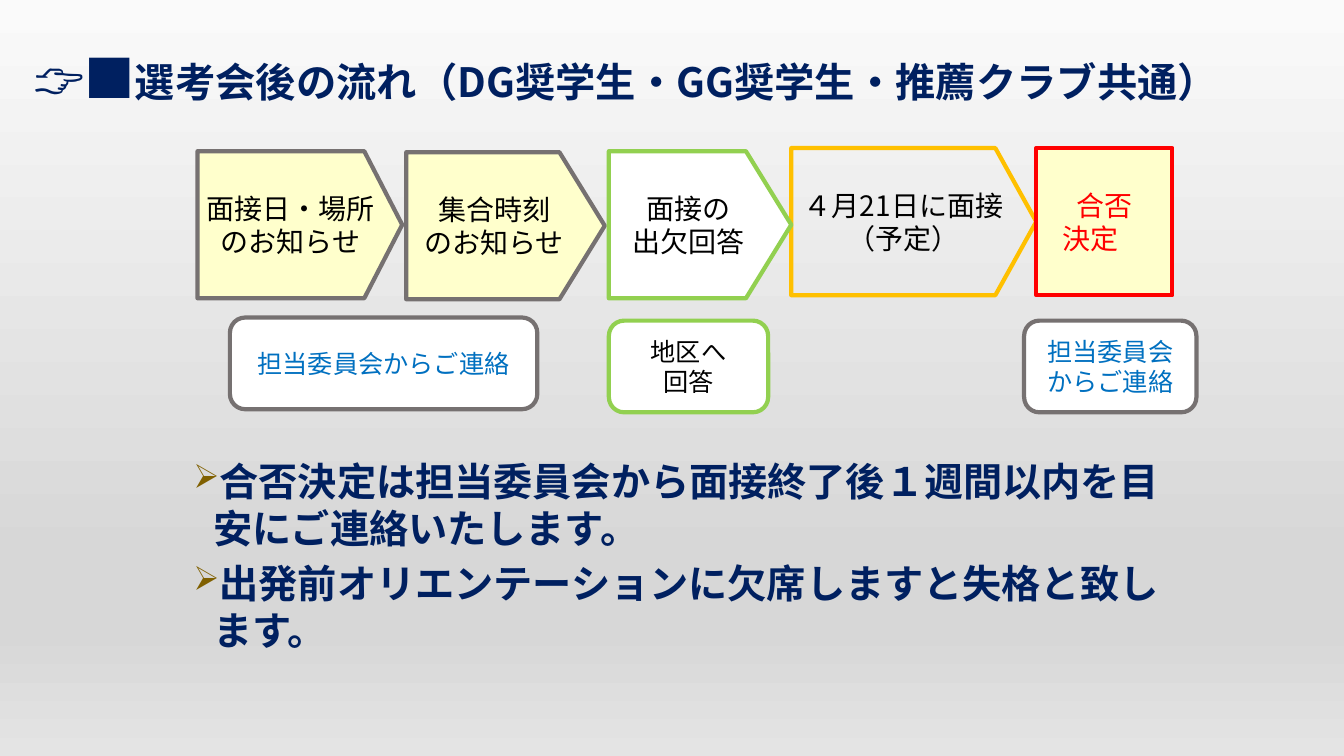
from copy import deepcopy

from lxml.etree import SubElement
from pptx import Presentation
from pptx.dml.color import RGBColor
from pptx.enum.shapes import MSO_SHAPE as Preset
from pptx.enum.text import MSO_ANCHOR as Anchor, MSO_AUTO_SIZE as AutoSize, PP_ALIGN as Align
from pptx.oxml.ns import qn
from pptx.util import Pt

FONT = "Noto Sans CJK JP"
NAVY, BLUE, BLACK, RED = "002060", "0070C0", "000000", "FF0000"
GRAY, GREEN, GOLD = "767171", "92D050", "FFC000"
CREAM, WHITE = "FFFFCC", "FFFFFF"


def rgb(value):
    return RGBColor.from_string(value)


def format_run(run, size, color, bold=False):
    run.font.size = Pt(size)
    run.font.bold = bold
    run.font.color.rgb = rgb(color)
    run.font.name = FONT
    SubElement(run.font._element, qn("a:ea"), typeface=FONT)


presentation = Presentation()
presentation.slide_width, presentation.slide_height = Pt(960), Pt(540)
slide = presentation.slides.add_slide(presentation.slide_layouts[5])

background = slide.background.fill
background.gradient()
background.gradient_angle = 270
stop_list = slide.element.find(".//" + qn("a:gsLst"))
for extra_stop in range(2):
    stop_list.append(deepcopy(stop_list[0]))
shades = [(0, "FAFAFA"), (0.74, "D7D7D7"), (0.83, "D7D7D7"), (1, "E4E4E4")]
for stop, (position, shade) in zip(background.gradient_stops, shades):
    stop.position = position
    stop.color.rgb = rgb(shade)

title = slide.shapes.title
title.left, title.top, title.width, title.height = Pt(16.6), Pt(20.2), Pt(943), Pt(61.2)
title.text_frame.auto_size = AutoSize.NONE
title.text_frame.vertical_anchor = Anchor.BOTTOM
heading = title.text_frame.paragraphs[0]
heading.alignment = Align.LEFT
heading.line_spacing = 0.9
for text, size in [("👉■", 36), ("選考会後の流れ（DG奨学生・GG奨学生・推薦クラブ共通）", 28.8)]:
    run = heading.add_run()
    run.text = text
    format_run(run, size, NAVY, True)

steps = [
    (141.1, 108, 146.2, 0.258, CREAM, GRAY, BLACK, "面接日・場所\nのお知らせ"),
    (290.2, 108.7, 141.8, 0.308, CREAM, GRAY, BLACK, "集合時刻\nのお知らせ"),
    (565.2, 105.8, 175, 0.278, None, GOLD, BLACK, "４月21日に面接（予定）"),
    (740.2, 105.8, 97.2, None, CREAM, RED, RED, "合否\n決定　"),
    (434.9, 108, 130.3, 0.308, WHITE, GREEN, BLACK, "面接の\n出欠回答"),
]
contacts = [
    (164.2, 226.8, 219.6, GRAY, BLUE, "担当委員会からご連絡"),
    (731.5, 229, 123.1, GRAY, BLUE, "担当委員会からご連絡"),
    (434.9, 229, 113.8, GREEN, BLACK, "地区へ\n回答"),
]
boxes = []
for left, top, width, point, fill, line, color, text in steps:
    preset = Preset.RECTANGLE if point is None else Preset.PENTAGON
    shape = slide.shapes.add_shape(preset, Pt(left), Pt(top), Pt(width), Pt(105.1))
    if point is not None:
        shape.adjustments[0] = point
    frame = shape.text_frame
    frame.margin_left = frame.margin_right = Pt(5.8)
    frame.margin_top = frame.margin_bottom = Pt(0.7)
    boxes.append((shape, fill, line, color, text, 20))
for left, top, width, line, color, text in contacts:
    shape = slide.shapes.add_shape(Preset.ROUNDED_RECTANGLE, Pt(left), Pt(top), Pt(width), Pt(65.5))
    boxes.append((shape, WHITE, line, color, text, 18))

for shape, fill, line, color, text, size in boxes:
    shape.shadow.inherit = False
    if fill is None:
        shape.fill.background()
    else:
        shape.fill.solid()
        shape.fill.fore_color.rgb = rgb(fill)
    shape.line.color.rgb = rgb(line)
    shape.line.width = Pt(3)
    frame = shape.text_frame
    frame.word_wrap = True
    frame.vertical_anchor = Anchor.MIDDLE
    frame.text = text
    for paragraph in frame.paragraphs:
        paragraph.alignment = Align.CENTER
        format_run(paragraph.runs[0], size, color)

notices = slide.shapes.add_textbox(Pt(131), Pt(323), Pt(708.5), Pt(167)).text_frame
notices.word_wrap = True
notices.text = (
    "合否決定は担当委員会から面接終了後１週間以内を目安にご連絡いたします。\n"
    "出発前オリエンテーションに欠席しますと失格と致します。"
)
for paragraph in notices.paragraphs:
    format_run(paragraph.runs[0], 28, NAVY, True)
    properties = paragraph._element.get_or_add_pPr()
    properties.set("marL", str(Pt(14.4)))
    properties.set("indent", str(Pt(-14.4)))
    bullet_color = SubElement(properties, qn("a:buClr"))
    SubElement(bullet_color, qn("a:srgbClr"), val="806000")
    SubElement(properties, qn("a:buSzPct"), val="85000")
    SubElement(properties, qn("a:buChar"), char="➢")
notices.paragraphs[1].space_before = Pt(5.6)

presentation.save("out.pptx")
